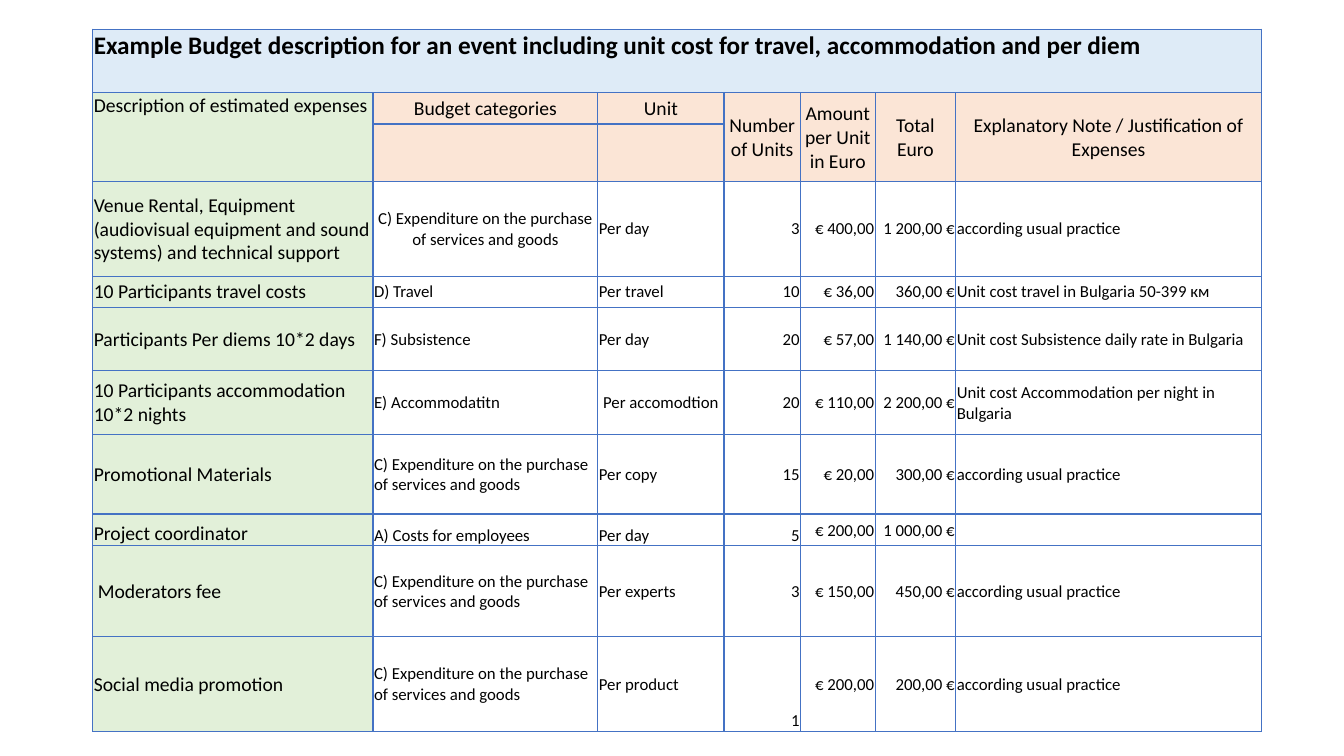
"""Build the slide with an example event budget table."""
from dataclasses import dataclass

from lxml import etree
from pptx import Presentation
from pptx.dml.color import RGBColor
from pptx.enum.text import MSO_ANCHOR as Anchor, PP_ALIGN as Align
from pptx.oxml.ns import qn
from pptx.util import Inches, Pt


@dataclass(frozen=True)
class Theme:
    """Colours and type sizes of the slide."""
    font: str = "Calibri"
    ink: str = "000000"
    border: str = "4472C4"
    title_fill: str = "DEEBF7"
    label_fill: str = "E2F0D9"
    header_fill: str = "FBE5D6"
    title_size: int = 18
    label_size: int = 14
    body_size: int = 12


THEME = Theme()
COLUMN_WIDTHS = [2.78, 2.23, 1.25, 0.76, 0.74, 0.8, 3.03]
ROW_HEIGHTS = [0.63, 0.31, 0.57, 0.94, 0.31, 0.63, 0.63, 0.79, 0.31, 0.9, 0.94]
TITLE = ("Example Budget description for an event including unit cost "
         "for travel, accommodation and per diem")
HEADERS = ["Description of estimated expenses", "Budget categories", "Unit",
           "Number of Units", "Amount per Unit in Euro", "Total Euro",
           "Explanatory Note / Justification of Expenses"]
SERVICES = "C) Expenditure on the purchase of services and goods"
USUAL = "according usual practice"
EXPENSES = [
    ["Venue Rental, Equipment (audiovisual equipment and sound systems) and technical support",
     SERVICES, "Per day", "3", "€ 400,00", "1 200,00 €", USUAL],
    ["10 Participants travel costs", "D) Travel", "Per travel", "10",
     "€ 36,00", "360,00 €", "Unit cost travel in Bulgaria 50-399 км"],
    ["Participants Per diems 10*2 days", "F) Subsistence", "Per day", "20",
     "€ 57,00", "1 140,00 €", "Unit cost Subsistence daily rate in Bulgaria"],
    ["10 Participants accommodation 10*2 nights", "E) Accommodatitn",
     "Per accomodtion", "20", "€ 110,00", "2 200,00 €",
     "Unit cost Accommodation per night in Bulgaria"],
    ["Promotional Materials", SERVICES, "Per copy", "15", "€ 20,00", "300,00 €", USUAL],
    ["Project coordinator", "A) Costs for employees", "Per day", "5",
     "€ 200,00", "1 000,00 €", ""],
    ["Moderators fee", SERVICES, "Per experts", "3", "€ 150,00", "450,00 €", USUAL],
    ["Social media promotion", SERVICES, "Per product", "1", "€ 200,00", "200,00 €", USUAL],
]
FIRST_EXPENSE_ROW = 3
COLUMN_ALIGNS = [Align.LEFT] * 3 + [Align.RIGHT] * 3 + [Align.LEFT]
CENTRED_CELLS = {(0, 1), (3, 2)}
BOTTOM_CELLS = {(5, 0), (5, 1), (5, 2), (5, 3), (7, 3)}


def add_budget_table(page):
    """Add the empty table with its column widths and row heights."""
    frame = page.shapes.add_table(
        len(ROW_HEIGHTS), len(COLUMN_WIDTHS), Inches(0.92), Inches(0.29),
        Inches(sum(COLUMN_WIDTHS)), Inches(sum(ROW_HEIGHTS)))
    table = frame.table
    table.first_row = table.horz_banding = False
    for column, width in zip(table.columns, COLUMN_WIDTHS):
        column.width = Inches(width)
    for row, height in zip(table.rows, ROW_HEIGHTS):
        row.height = Inches(height)
    return table


def style_cell(cell, fill=None):
    """Set the insets, borders and fill of a cell."""
    cell.margin_left = cell.margin_right = cell.margin_top = Inches(0.01)
    cell.margin_bottom = 0
    properties = cell._tc.get_or_add_tcPr()
    for side in ("lnL", "lnR", "lnT", "lnB"):
        line = etree.SubElement(properties, qn(f"a:{side}"), w=str(Pt(1)))
        solid = etree.SubElement(line, qn("a:solidFill"))
        etree.SubElement(solid, qn("a:srgbClr"), val=THEME.border)
    if fill:
        cell.fill.solid()
        cell.fill.fore_color.rgb = RGBColor.from_string(fill)
    else:
        cell.fill.background()


def write_cell(cell, text, size, align=Align.LEFT, anchor=Anchor.MIDDLE, bold=False):
    """Write one run of text in a cell."""
    cell.vertical_anchor = anchor
    para = cell.text_frame.paragraphs[0]
    para.alignment = align
    if text:
        span = para.add_run()
        span.text = text
        span.font.name = THEME.font
        span.font.size = Pt(size)
        span.font.bold = bold
        span.font.color.rgb = RGBColor.from_string(THEME.ink)


def fill_title(table):
    """Fill the title row across all columns."""
    last = len(COLUMN_WIDTHS) - 1
    for column in range(last + 1):
        style_cell(table.cell(0, column), THEME.title_fill)
    write_cell(table.cell(0, 0), TITLE, THEME.title_size, anchor=Anchor.TOP, bold=True)
    table.cell(0, 0).merge(table.cell(0, last))


def fill_headers(table):
    """Fill the two header rows, merging all but the category and unit columns."""
    for column, text in enumerate(HEADERS):
        top, below = table.cell(1, column), table.cell(2, column)
        for cell in (top, below):
            style_cell(cell, THEME.header_fill if column else THEME.label_fill)
        write_cell(top, text, THEME.label_size,
                   Align.CENTER if column else Align.LEFT,
                   Anchor.MIDDLE if column else Anchor.TOP)
        if column not in (1, 2):
            top.merge(below)


def fill_expenses(table):
    """Fill one row for each expense."""
    for index, expense in enumerate(EXPENSES):
        for column, text in enumerate(expense):
            cell = table.cell(FIRST_EXPENSE_ROW + index, column)
            place = (index, column)
            style_cell(cell, None if column else THEME.label_fill)
            write_cell(cell, text, THEME.body_size if column else THEME.label_size,
                       Align.CENTER if place in CENTRED_CELLS else COLUMN_ALIGNS[column],
                       Anchor.BOTTOM if place in BOTTOM_CELLS else Anchor.MIDDLE)
            if text == "Moderators fee":
                cell.margin_left = Inches(0.05)


def main():
    """Build and save the deck."""
    deck = Presentation()
    deck.slide_width, deck.slide_height = Inches(13.33), Inches(7.5)
    page = deck.slides.add_slide(deck.slide_layouts.get_by_name("Blank"))
    table = add_budget_table(page)
    fill_title(table)
    fill_headers(table)
    fill_expenses(table)
    deck.save("out.pptx")


if __name__ == "__main__":
    main()
